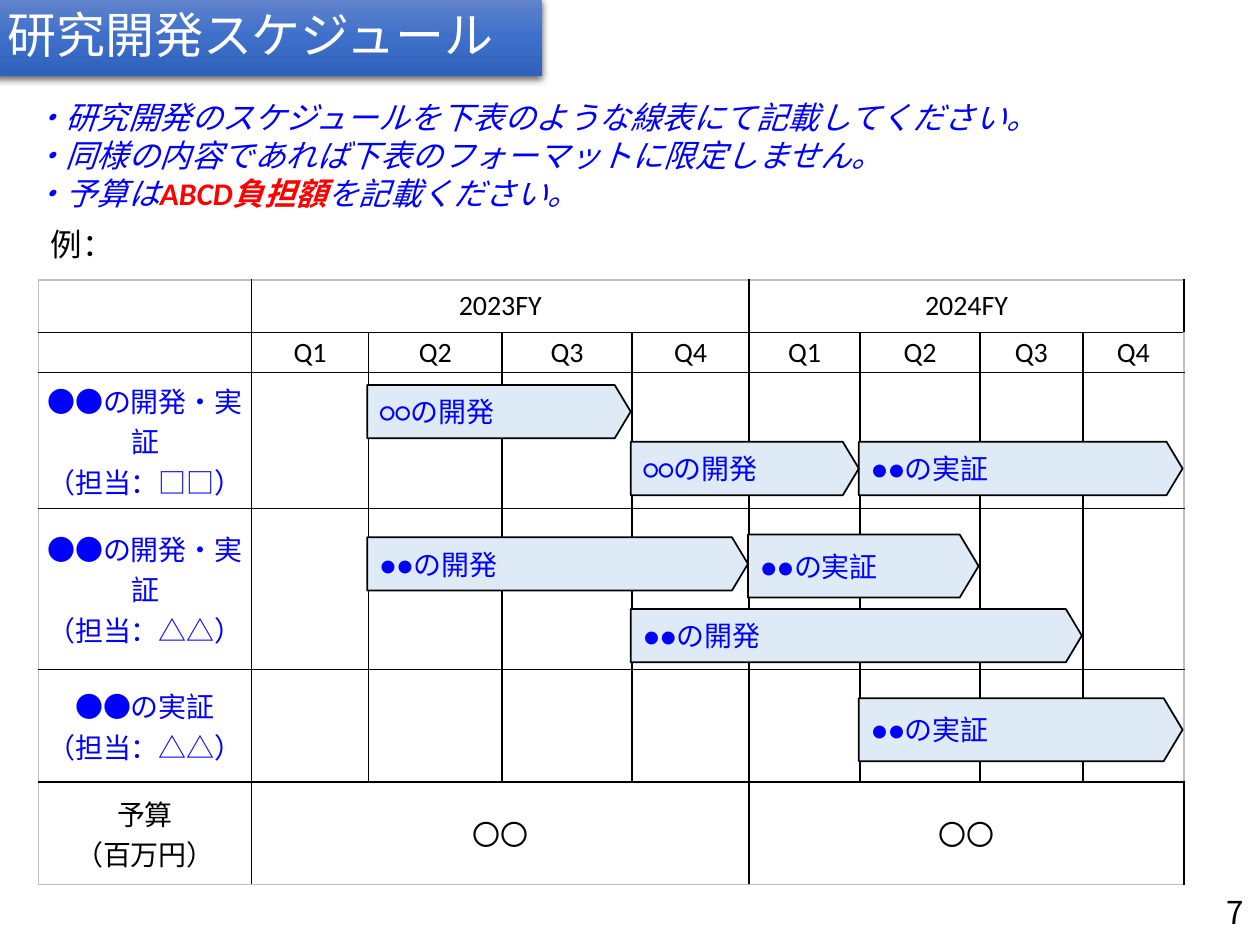
from itertools import accumulate

from lxml import etree
from pptx import Presentation
from pptx.dml.color import RGBColor
from pptx.enum import shapes, text
from pptx.oxml import parse_xml
from pptx.oxml.ns import qn
from pptx.util import Pt

COLORS = {
    "ink": "000000", "guide": "0000FF", "alert": "FF0000", "white": "FFFFFF",
    "bar": "DEEBF7", "frame": "BFBFBF",
    "banner_top": "6183CB", "banner_mid": "3E70CA", "banner_end": "3062BB",
}
CALIBRI, NOTO = "Calibri", "Noto Sans CJK JP"
NS = 'xmlns:a="http://schemas.openxmlformats.org/drawingml/2006/main"'
NO_MARGINS = dict.fromkeys(
    ("margin_left", "margin_top", "margin_right", "margin_bottom"), 0)
HANGING = {"marL": 7.2, "indent": -7.2}

COLUMNS = [121.7, 67, 76.3, 74.2, 67, 63.4, 68.4, 59, 57.6]
ROWS = [30, 23, 77.5, 92, 64.5, 58.5]
YEARS = [("2023FY", 1), ("2024FY", 5)]
TASKS = [
    ["●●の開発・実証", "（担当：□□）"],
    ["●●の開発・実証", "（担当：△△）"],
    ["●●の実証", "（担当：△△）"],
]
BUDGET = ["予算", "（百万円）"]
BARS = [
    ("●●の開発", 3, 7, 188, 30.5),
    ("●●の実証", 4, 6, 145.5, 36),
    ("●●の開発", 1, 4, 147, 30.5),
    ("●●の実証", 5, 8, 92.5, 30.5),
    ("○○の開発", 1, 3, 60, 30.5),
    ("○○の開発", 3, 5, 92.5, 30.5),
    ("●●の実証", 5, 8, 239, 36),
]
GUIDANCE = [
    [("・研究開発のスケジュールを下表のような線表にて記載してください。", {})],
    [("・同様の内容であれば下表のフォーマットに限定しません。", {})],
    [("・予算は", {}), ("ABCD負担額", {"color": "alert", "bold": True}),
     ("を記載ください。", {})],
]


def apply(target, formats):
    for name, value in formats.items():
        setattr(target, name, value)


def place(part, box):
    apply(part, dict(zip(("left", "top", "width", "height"), map(Pt, box))))


def write(frame, lines, size, color="ink", font=CALIBRI, align="LEFT",
          hanging=False, **paragraph_formats):
    for index, line in enumerate(lines):
        paragraph = frame.paragraphs[0] if index == 0 else frame.add_paragraph()
        apply(paragraph, {"alignment": getattr(text.PP_ALIGN, align),
                          "space_before": Pt(0), **paragraph_formats})
        if hanging:
            properties = paragraph._p.get_or_add_pPr()
            for name, value in HANGING.items():
                properties.set(name, str(int(Pt(value))))
            etree.SubElement(properties, qn("a:buNone"))
        for words, changes in [(line, {})] if isinstance(line, str) else line:
            run = paragraph.add_run()
            run.text = words
            formats = {"color": color, "size": Pt(size), "name": font, **changes}
            run.font.color.rgb = RGBColor.from_string(COLORS[formats.pop("color")])
            apply(run.font, formats)
            etree.SubElement(run._r.get_or_add_rPr(), qn("a:ea"), typeface=font)


def banner(slide, box):
    title = slide.shapes.title
    place(title, box)
    stops = "".join(
        f'<a:gs pos="{position}"><a:srgbClr val="{COLORS[name]}"/></a:gs>'
        for position, name in ((0, "banner_top"), (50000, "banner_mid"),
                               (100000, "banner_end")))
    title._element.spPr.append(parse_xml(
        f'<a:gradFill {NS} rotWithShape="1"><a:gsLst>{stops}</a:gsLst>'
        '<a:lin ang="5400000" scaled="0"/></a:gradFill>'))
    title._element.spPr.append(parse_xml(
        f'<a:effectLst {NS}><a:outerShdw blurRad="{Pt(4.5)}" dist="{Pt(1.5)}" '
        f'dir="5400000" rotWithShape="0"><a:srgbClr val="{COLORS["ink"]}">'
        '<a:alpha val="63000"/></a:srgbClr></a:outerShdw></a:effectLst>'))
    apply(title.text_frame, {"auto_size": text.MSO_AUTO_SIZE.NONE,
                             "vertical_anchor": text.MSO_ANCHOR.MIDDLE})
    write(title.text_frame, ["研究開発スケジュール"], 28, "white", line_spacing=0.9)


def guidance(slide, box):
    body = slide.placeholders[1]
    place(body, box)
    body.text_frame.auto_size = text.MSO_AUTO_SIZE.NONE
    write(body.text_frame, GUIDANCE, 18, "guide", hanging=True)
    for paragraph in body.text_frame.paragraphs:
        for run in paragraph.runs:
            run.font.italic = True


def label(slide, box, words, font=CALIBRI, align="LEFT", **frame_formats):
    caption = slide.shapes.add_textbox(*map(Pt, box))
    apply(caption.text_frame, {"word_wrap": True, **frame_formats})
    write(caption.text_frame, [words], 18, font=font, align=align)


def rule_cell(cell, row, column):
    outer = {"L": column == 0, "R": column == len(COLUMNS) - 1,
             "T": row == 0, "B": row == len(ROWS) - 1}
    properties = cell._tc.get_or_add_tcPr()
    for index, (side, is_outer) in enumerate(outer.items()):
        color = COLORS["frame" if is_outer else "ink"]
        properties.insert(index, parse_xml(
            f'<a:ln{side} {NS} w="{Pt(1)}"><a:solidFill><a:srgbClr val="{color}"/>'
            f'</a:solidFill></a:ln{side}>'))


def schedule(slide, left, top):
    grid = slide.shapes.add_table(
        len(ROWS), len(COLUMNS), Pt(left), Pt(top),
        Pt(sum(COLUMNS)), Pt(sum(ROWS))).table
    apply(grid, {"first_row": False, "horz_banding": False})
    for column, width in zip(grid.columns, COLUMNS):
        column.width = Pt(width)
    for row, height in zip(grid.rows, ROWS):
        row.height = Pt(height)
    for row in range(len(ROWS)):
        for column in range(len(COLUMNS)):
            cell = grid.cell(row, column)
            apply(cell, {**NO_MARGINS, "vertical_anchor": text.MSO_ANCHOR.MIDDLE})
            cell.fill.background()
            rule_cell(cell, row, column)

    def fill(row, column, lines, color="ink", font=CALIBRI):
        write(grid.cell(row, column).text_frame, lines, 16, color, font, "CENTER")

    last = len(ROWS) - 1
    for year, first in YEARS:
        for row, words, font in ((0, year, CALIBRI), (last, "〇〇", NOTO)):
            grid.cell(row, first).merge(grid.cell(row, first + 3))
            fill(row, first, [words], font=font)
        for quarter in range(4):
            fill(1, first + quarter, [f"Q{quarter + 1}"])
    for row, task in enumerate(TASKS, 2):
        fill(row, 0, task, "guide", NOTO)
    fill(last, 0, BUDGET, font=NOTO)

    edges = [left + offset - 0.8 for offset in accumulate(COLUMNS)]
    for words, start, end, offset, height in BARS:
        bar(slide, (edges[start], top + offset, edges[end] - edges[start], height),
            words)


def bar(slide, box, words):
    arrow = slide.shapes.add_shape(shapes.MSO_SHAPE.PENTAGON, *map(Pt, box))
    arrow.adjustments[0] = 0.3
    arrow.shadow.inherit = False
    arrow.fill.solid()
    arrow.fill.fore_color.rgb = RGBColor.from_string(COLORS["bar"])
    arrow.line.color.rgb = RGBColor.from_string(COLORS["ink"])
    arrow.line.width = Pt(1)
    arrow.text_frame.vertical_anchor = text.MSO_ANCHOR.MIDDLE
    write(arrow.text_frame, [words], 16, "guide", hanging=True)


def main():
    deck = Presentation()
    apply(deck, {"slide_width": Pt(720), "slide_height": Pt(540)})
    slide = deck.slides.add_slide(deck.slide_layouts[1])
    banner(slide, (-3, -0.7, 312.5, 44))
    guidance(slide, (12.2, 52.6, 707.8, 72.7))
    label(slide, (22, 125.3, 90, 29), "例：")
    schedule(slide, 22, 160)
    label(slide, (669, 512, 41.6, 18), "7", NOTO, "RIGHT", **NO_MARGINS,
          vertical_anchor=text.MSO_ANCHOR.MIDDLE)
    deck.save("out.pptx")


if __name__ == "__main__":
    main()
